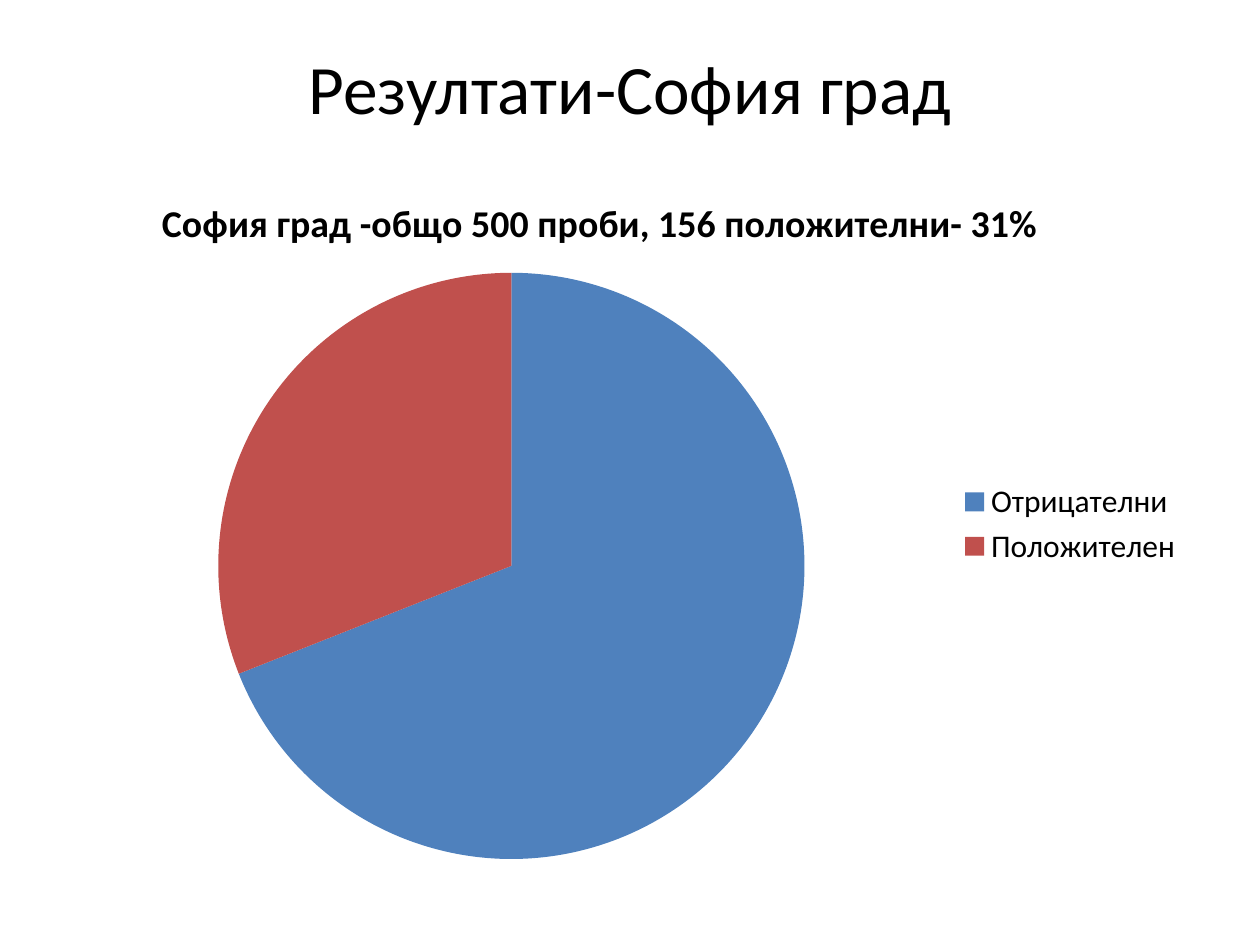
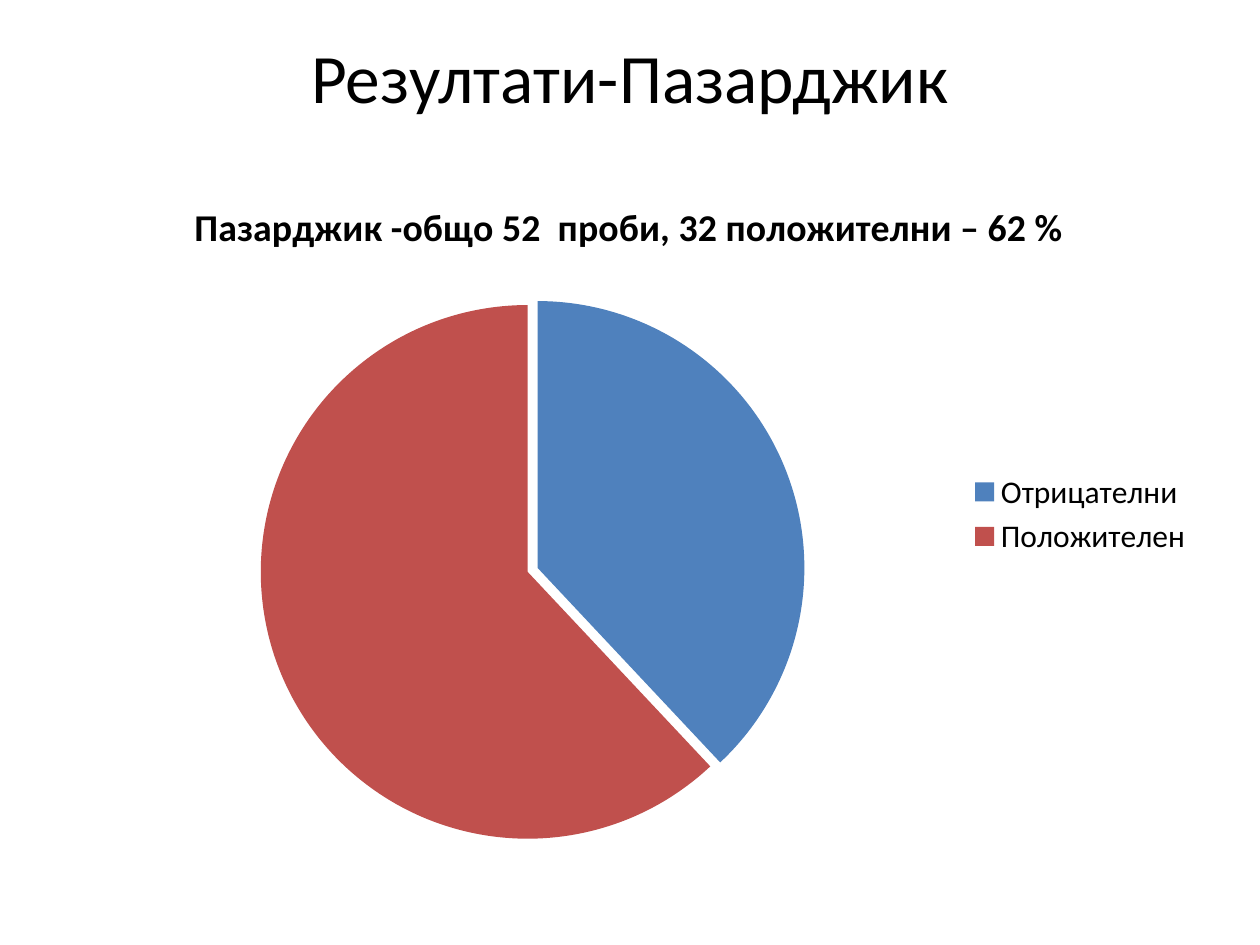
from lxml import etree
from pptx import Presentation
from pptx.chart.data import CategoryChartData
from pptx.dml.color import RGBColor
from pptx.enum.chart import XL_CHART_TYPE, XL_LEGEND_POSITION
from pptx.enum.text import MSO_ANCHOR, MSO_AUTO_SIZE, PP_ALIGN
from pptx.oxml.ns import qn
from pptx.util import Cm, Pt

PIE = XL_CHART_TYPE.PIE
RIGHT = XL_LEGEND_POSITION.RIGHT
MIDDLE = MSO_ANCHOR.MIDDLE
NO_AUTOFIT = MSO_AUTO_SIZE.NONE
CENTER = PP_ALIGN.CENTER

BLACK = RGBColor(0x00, 0x00, 0x00)
BLUE = RGBColor(0x4F, 0x81, 0xBD)
RED = RGBColor(0xC0, 0x50, 0x4D)

FONT = "Calibri"
TITLE_ONLY = 5
CATEGORIES = {"Отрицателни": BLUE, "Положителен": RED}

RESULTS = [
    {
        "title": "Резултати-София град",
        "title_height": 1.96,
        "caption": "София град -общо 500 проби, 156 положителни- 31%",
        "caption_place": {"x": 0.08, "y": 0.02},
        "corner": (1.3, 3.53),
        "values": (69, 31),
        "plot": {"x": 0.13, "y": 0.14, "w": 0.53, "h": 0.84},
        "explosion": 0,
    },
    {
        "title": "Резултати-Пазарджик",
        "title_height": 1.55,
        "caption": "Пазарджик -общо 52  проби, 32 положителни – 62 %",
        "caption_place": {"x": 0.1, "y": 0.04},
        "corner": (1.5, 3.33),
        "values": (38, 62),
        "plot": {"x": 0.16, "y": 0.19, "w": 0.49, "h": 0.78},
        "explosion": 2,
    },
]


def set_all(target, values):
    for name, value in values.items():
        setattr(target, name, value)


def add_value(parent, tag, value):
    child = etree.SubElement(parent, qn(tag))
    child.set("val", str(value))
    return child


class Report:
    def __init__(self):
        self.deck = Presentation()
        set_all(self.deck, {"slide_width": Cm(25.4), "slide_height": Cm(19.05)})
        self.page = None

    def add_page(self):
        self.page = self.deck.slides.add_slide(self.deck.slide_layouts[TITLE_ONLY])

    def style_font(self, font, size, bold=False):
        set_all(font, {"name": FONT, "size": Pt(size), "bold": bold})
        font.color.rgb = BLACK

    def add_title(self, text, height):
        box = self.page.shapes.title
        set_all(box, {"left": Cm(1.27), "top": Cm(0.76),
                      "width": Cm(22.86), "height": Cm(height)})
        frame = box.text_frame
        set_all(frame, {"text": text, "vertical_anchor": MIDDLE,
                        "auto_size": NO_AUTOFIT, "word_wrap": True})
        para = frame.paragraphs[0]
        para.alignment = CENTER
        self.style_font(para.runs[0].font, 39.6)

    def place(self, element, before, fractions, inner=False):
        for old in element.findall(qn("c:layout")):
            element.remove(old)
        layout = etree.Element(qn("c:layout"))
        manual = etree.SubElement(layout, qn("c:manualLayout"))
        if inner:
            add_value(manual, "c:layoutTarget", "inner")
        for side in "xy":
            add_value(manual, f"c:{side}Mode", "edge")
        for side, fraction in fractions.items():
            add_value(manual, f"c:{side}", fraction)
        element.find(qn(before)).addprevious(layout)

    def add_caption(self, chart, text, fractions):
        frame = chart.chart_title.text_frame
        frame.text = text
        self.style_font(frame.paragraphs[0].runs[0].font, 21.6, bold=True)
        chart.chart_title.include_in_layout = False
        self.place(chart.chart_title._element, "c:overlay", fractions)

    def add_pie(self, corner, values, caption, caption_place, plot, explosion):
        data = CategoryChartData()
        data.categories = list(CATEGORIES)
        data.add_series("Series 1", values)
        left, top = corner
        chart = self.page.shapes.add_chart(
            PIE, Cm(left), Cm(top), Cm(22.81), Cm(14.07), data).chart
        self.style_font(chart.font, 18)
        self.add_caption(chart, caption, caption_place)
        chart.has_legend = True
        set_all(chart.legend, {"position": RIGHT, "include_in_layout": False})
        pie = chart.plots[0]
        pie.vary_by_categories = True
        series = pie.series[0]
        for index, color in enumerate(CATEGORIES.values()):
            fill = series.points[index].format.fill
            fill.solid()
            fill.fore_color.rgb = color
        if explosion:
            mark = add_value(series._element, "c:explosion", explosion)
            series._element.find(qn("c:dPt")).addprevious(mark)
        self.place(pie._element.getparent(), "c:pieChart", plot, inner=True)


def main():
    report = Report()
    for result in RESULTS:
        report.add_page()
        report.add_title(result["title"], result["title_height"])
        report.add_pie(result["corner"], result["values"], result["caption"],
                       result["caption_place"], result["plot"], result["explosion"])
    report.deck.save("out.pptx")


if __name__ == "__main__":
    main()
